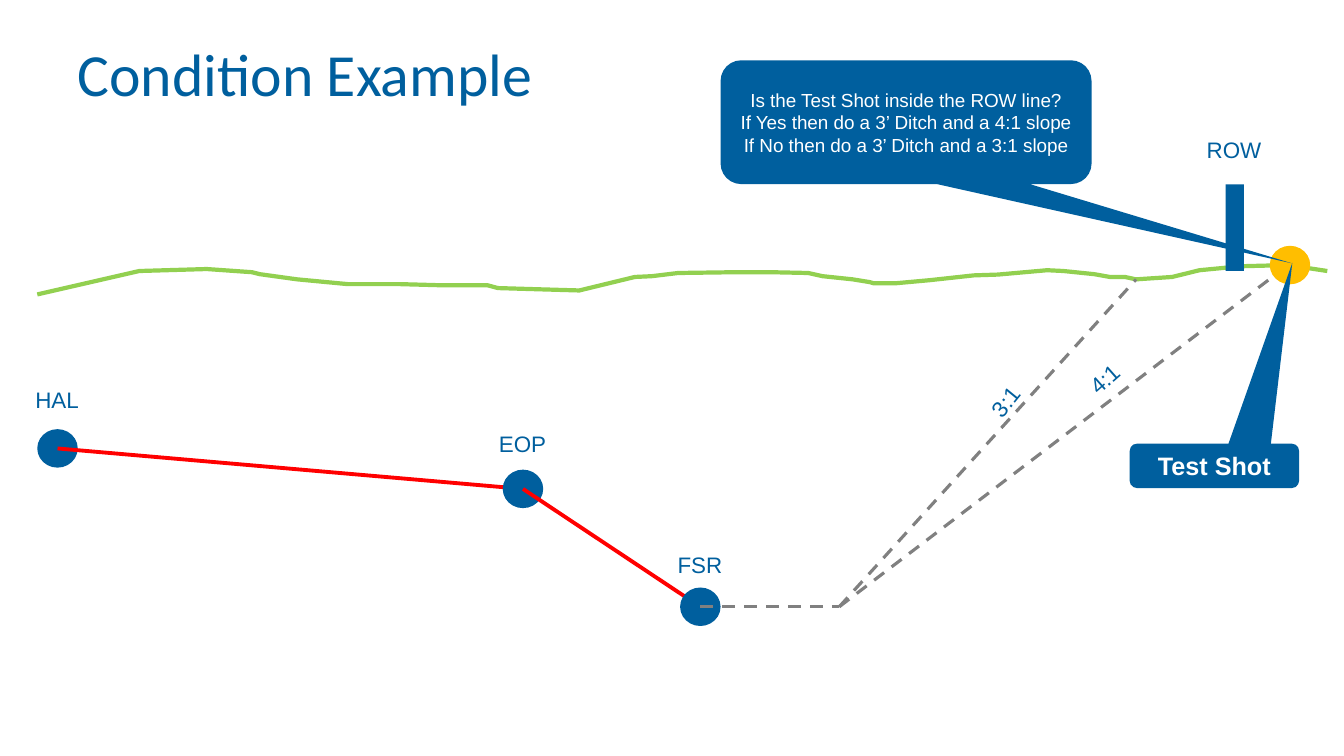
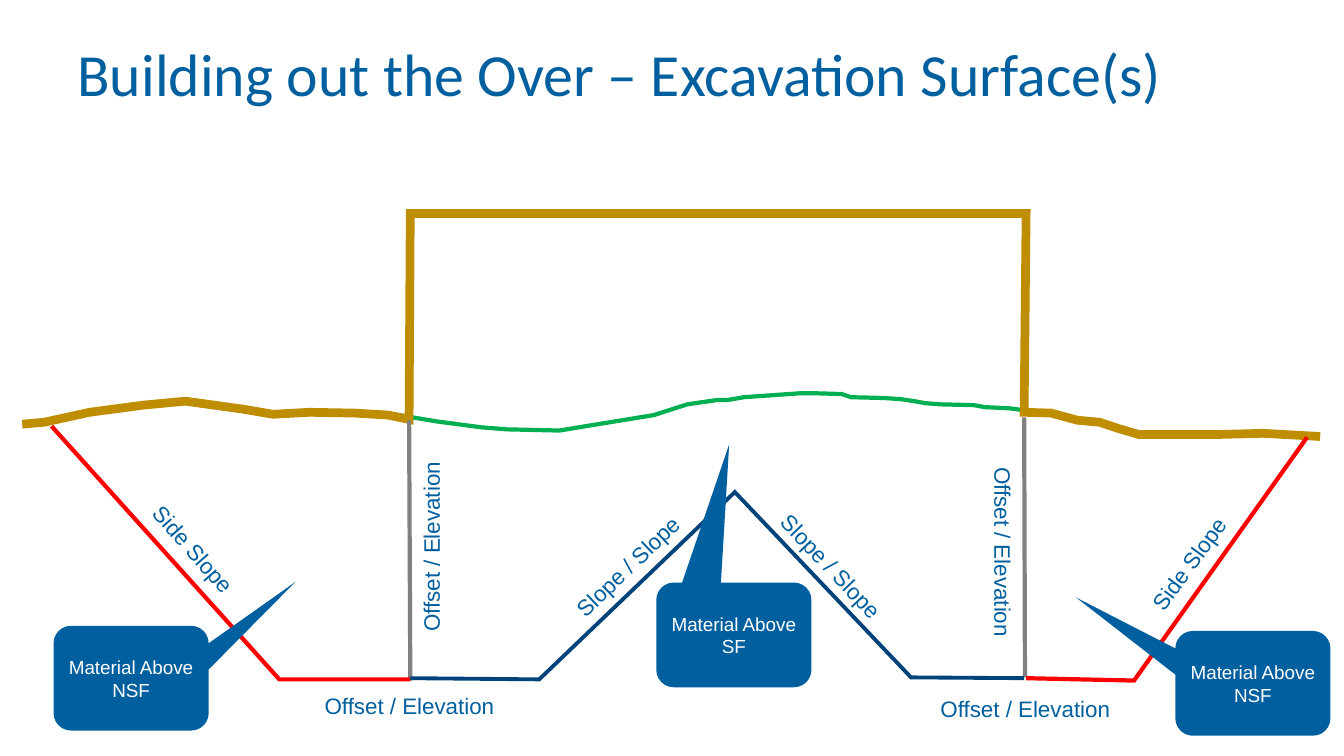
from lxml.etree import SubElement
from pptx import Presentation
from pptx.dml.color import RGBColor
from pptx.enum.dml import MSO_LINE
from pptx.enum.shapes import MSO_CONNECTOR, MSO_SHAPE
from pptx.enum.text import MSO_ANCHOR, MSO_AUTO_SIZE, PP_ALIGN
from pptx.oxml.ns import qn
from pptx.util import Cm, Pt

BLUE = RGBColor(0x00, 0x5F, 0x9E)
NAVY = RGBColor(0x00, 0x43, 0x7B)
WHITE = RGBColor(0xFF, 0xFF, 0xFF)
GRAY = RGBColor(0x80, 0x80, 0x80)
RED = RGBColor(0xFF, 0x00, 0x00)
YELLOW = RGBColor(0xFF, 0xBE, 0x00)
LIME = RGBColor(0x92, 0xD0, 0x50)
GREEN = RGBColor(0x00, 0xB0, 0x50)
OCHRE = RGBColor(0xBF, 0x8E, 0x00)

TITLE_ONLY = 5
TITLE_BOX = {"left": Cm(1.7), "top": Cm(0.94), "width": Cm(30.48), "height": Cm(2.03)}
TITLE_FRAME = {"auto_size": MSO_AUTO_SIZE.NONE, "vertical_anchor": MSO_ANCHOR.MIDDLE}
TITLE_PARAGRAPH = {"alignment": PP_ALIGN.LEFT, "line_spacing": 0.9}
TITLE_FONT = {"name": "Calibri", "size": Pt(42.7)}
NO_MARGINS = {side: 0 for side in ("margin_left", "margin_top", "margin_right", "margin_bottom")}
LABEL_FRAME = {**NO_MARGINS, "word_wrap": False, "auto_size": MSO_AUTO_SIZE.SHAPE_TO_FIT_TEXT}
LABEL_PARAGRAPH = {"alignment": PP_ALIGN.CENTER, "line_spacing": 1.2, "space_after": Pt(18)}
LABEL_FONT = {"name": "Arial", "size": Pt(16)}
CALLOUT_FRAME = {**NO_MARGINS, "word_wrap": True, "vertical_anchor": MSO_ANCHOR.MIDDLE}
CALLOUT_PARAGRAPH = {"alignment": PP_ALIGN.CENTER}
CALLOUT_FONT = {"name": "Arial", "size": Pt(13.5)}
TEST_SHOT_FONT = {"name": "Arial", "size": Pt(18), "bold": True}

LABEL_HEIGHT = 0.74
MARKER_WIDTH, MARKER_HEIGHT = 1.02, 0.97
MATERIAL_SIZE = (3.91, 2.64)

DITCH_GROUND = [
    (0.94, 7.42), (3.51, 6.83), (5.21, 6.78), (6.35, 6.86), (6.55, 6.91), (7.49, 7.04),
    (8.76, 7.16), (10.06, 7.16), (11.15, 7.19), (12.29, 7.19), (12.55, 7.26), (13.56, 7.29),
    (14.6, 7.32), (16, 6.98), (16.43, 6.96), (17.09, 6.88), (18.54, 6.86), (19.43, 6.86),
    (20.37, 6.88), (20.73, 6.96), (21.49, 7.04), (21.92, 7.11), (22.02, 7.14), (22.56, 7.14),
    (23.44, 7.06), (24.54, 6.94), (25.15, 6.92), (26.39, 6.81), (26.8, 6.83), (27.58, 6.91),
    (27.97, 6.98), (28.35, 6.98), (28.63, 7.04), (29.54, 6.98), (30.23, 6.81), (31.27, 6.71),
    (32.46, 6.68), (33.45, 6.83),
]
EXISTING_GROUND = [
    (0.97, 10.67), (1.55, 10.54), (1.98, 10.41), (2.57, 10.31), (3.3, 10.24), (4.7, 10.13),
    (5.66, 10.26), (6.71, 10.39), (9.09, 10.41), (9.93, 10.44), (11, 10.62), (12.14, 10.77),
    (12.78, 10.82), (14.1, 10.85), (14.58, 10.77), (16.48, 10.46), (17.32, 10.19),
    (18.08, 10.08), (18.34, 10.08), (18.75, 10.01), (20.17, 9.91), (20.52, 9.91),
    (21.21, 9.93), (21.45, 10.01), (22.28, 10.03), (22.71, 10.06), (23.04, 10.11),
    (23.32, 10.16), (23.7, 10.19), (24.54, 10.21), (24.82, 10.26), (25.43, 10.29),
    (26.37, 10.41), (26.8, 10.54), (27.03, 10.57), (27.91, 10.69), (28.37, 10.85),
    (28.6, 10.9), (29.29, 10.92), (30.81, 10.92), (31.29, 10.95), (31.98, 10.95),
    (32.89, 10.97),
]
FINISHED_SURFACE = [
    (0.56, 10.69), (1.12, 10.64), (2.26, 10.39), (3.61, 10.21), (4.67, 10.11), (6.12, 10.31),
    (6.88, 10.44), (7.8, 10.39), (8.94, 10.41), (9.78, 10.46), (10.31, 10.57), (10.34, 5.38),
    (25.86, 5.38), (25.81, 10.39), (26.49, 10.41), (27.15, 10.59), (27.71, 10.64),
    (28.19, 10.8), (28.7, 10.95), (29.49, 10.95), (30.71, 10.95), (31.83, 10.92), (33.27, 11),
]
LEFT_SIDE_SLOPE = [(10.34, 17.12), (7.04, 17.12), (1.3, 10.74)]
RIGHT_SIDE_SLOPE = [(25.86, 17.09), (28.58, 17.15), (32.94, 11.02)]
EXCAVATION_FLOOR = [(10.34, 17.09), (13.59, 17.12), (18.52, 12.4), (22.96, 17.07), (25.81, 17.09)]


def apply_format(target, values):
    for name, value in values.items():
        setattr(target, name, value)


def write_text(text_frame, lines, frame_format, paragraph_format, font_format, color):
    apply_format(text_frame, frame_format)
    text_frame.text = "\n".join(lines)
    for paragraph in text_frame.paragraphs:
        apply_format(paragraph, paragraph_format)
        apply_format(paragraph.font, font_format)
        paragraph.font.color.rgb = color


def add_titled_slide(presentation, title_text):
    slide = presentation.slides.add_slide(presentation.slide_layouts[TITLE_ONLY])
    title = slide.shapes.title
    apply_format(title, TITLE_BOX)
    write_text(title.text_frame, [title_text], TITLE_FRAME, TITLE_PARAGRAPH, TITLE_FONT, BLUE)
    return slide


def add_filled_shape(slide, kind, left, top, width, height, color):
    shape = slide.shapes.add_shape(kind, Cm(left), Cm(top), Cm(width), Cm(height))
    shape.shadow.inherit = False
    shape.fill.solid()
    shape.fill.fore_color.rgb = color
    shape.line.fill.background()
    return shape


def add_marker(slide, center, color):
    left, top = center[0] - MARKER_WIDTH / 2, center[1] - MARKER_HEIGHT / 2
    add_filled_shape(slide, MSO_SHAPE.OVAL, left, top, MARKER_WIDTH, MARKER_HEIGHT, color)


def add_callout(slide, position, size, pointer, lines, font_format=CALLOUT_FONT):
    shape = add_filled_shape(slide, MSO_SHAPE.ROUNDED_RECTANGULAR_CALLOUT, *position, *size, BLUE)
    for index, value in enumerate(pointer):
        shape.adjustments[index] = value
    write_text(shape.text_frame, lines, CALLOUT_FRAME, CALLOUT_PARAGRAPH, font_format, WHITE)


def add_label(slide, text, left, top, width, rotation=0):
    label = slide.shapes.add_textbox(Cm(left), Cm(top), Cm(width), Cm(LABEL_HEIGHT))
    label.rotation = rotation
    write_text(label.text_frame, [text], LABEL_FRAME, LABEL_PARAGRAPH, LABEL_FONT, BLUE)


def add_line(slide, start, end, color, weight, dash=None):
    ends = [Cm(value) for value in (*start, *end)]
    connector = slide.shapes.add_connector(MSO_CONNECTOR.STRAIGHT, *ends)
    connector.line.color.rgb = color
    connector.line.width = Pt(weight)
    connector.line.dash_style = dash
    SubElement(connector._element.spPr, qn("a:effectLst"))


def add_polyline(slide, points, color, weight):
    first, *rest = [(Cm(x), Cm(y)) for x, y in points]
    builder = slide.shapes.build_freeform(*first)
    builder.add_line_segments(rest, close=False)
    shape = builder.convert_to_shape()
    shape.shadow.inherit = False
    shape.fill.background()
    shape.line.color.rgb = color
    shape.line.width = Pt(weight)
    SubElement(shape.line._get_or_add_ln(), qn("a:miter"), lim="800000")


def build_condition_slide(presentation):
    slide = add_titled_slide(presentation, "Condition Example")
    add_polyline(slide, DITCH_GROUND, LIME, 3)

    stations = [(1.45, 11.3), (13.18, 12.32), (17.65, 15.29)]
    for start, end in zip(stations, stations[1:]):
        add_marker(slide, start, BLUE)
        add_line(slide, start, end, RED, 2.75)
    shoulder = stations[-1]
    add_marker(slide, shoulder, BLUE)

    ditch = (21.15, 15.29)
    add_line(slide, shoulder, ditch, GRAY, 2.25, MSO_LINE.DASH)
    add_filled_shape(slide, MSO_SHAPE.RECTANGLE, 30.89, 4.65, 0.46, 2.18, BLUE)
    for daylight in [(28.63, 7.04), (32.46, 6.68)]:
        add_line(slide, ditch, daylight, GRAY, 2.25, MSO_LINE.DASH)

    for label in [
        ("ROW", 30.3, 3.3, 1.6),
        ("3:1", 24.64, 9.68, 1.22, 309.2),
        ("4:1", 27.15, 9.09, 1.22, 318.5),
        ("HAL", 0.64, 9.6, 1.6),
        ("EOP", 12.37, 10.7, 1.6),
        ("FSR", 16.84, 13.75, 1.6),
    ]:
        add_label(slide, *label)

    add_marker(slide, (32.51, 6.68), YELLOW)
    add_callout(slide, (28.47, 11.18), (4.27, 1.12), (0.46, -4.57), ["Test Shot"], TEST_SHOT_FONT)
    add_callout(slide, (18.16, 1.52), (9.35, 3.12), (1.04, 1.14), [
        "Is the Test Shot inside the ROW line?",
        "If Yes then do a 3’ Ditch and a 4:1 slope",
        "If No then do a 3’ Ditch and a 3:1 slope",
    ])


def build_excavation_slide(presentation):
    slide = add_titled_slide(presentation, "Building out the Over – Excavation Surface(s)")
    add_polyline(slide, EXISTING_GROUND, GREEN, 3)
    add_polyline(slide, FINISHED_SURFACE, OCHRE, 6.25)
    add_line(slide, (10.31, 10.59), (10.34, 17.15), GRAY, 3)
    add_line(slide, (25.81, 10.52), (25.83, 17.07), GRAY, 3)
    add_polyline(slide, LEFT_SIDE_SLOPE, RED, 3)
    add_polyline(slide, RIGHT_SIDE_SLOPE, RED, 3)
    add_polyline(slide, EXCAVATION_FLOOR, NAVY, 2.75)

    for text, width, places in [
        ("Offset / Elevation", 4.34,
         [(8.59, 13.41, 270), (23.22, 13.54, 90), (23.67, 17.37, 0), (8.15, 17.3, 0)]),
        ("Side Slope", 2.74, [(28.5, 13.77, 306.3), (3.58, 13.39, 48.6)]),
        ("Slope / Slope", 3.38, [(19.33, 13.82, 46.4), (14.05, 13.82, 316.1)]),
    ]:
        for left, top, rotation in places:
            add_label(slide, text, left, top, width, rotation)

    for position, pointer, surface in [
        ((1.35, 15.77), (1.06, -0.92), "NSF"),
        ((29.62, 15.9), (-1.14, -0.82), "NSF"),
        ((16.54, 14.68), (-0.03, -1.82), "SF"),
    ]:
        add_callout(slide, position, MATERIAL_SIZE, pointer, ["Material Above", surface])


def main():
    presentation = Presentation()
    presentation.slide_width = Cm(33.87)
    presentation.slide_height = Cm(19.05)
    build_condition_slide(presentation)
    build_excavation_slide(presentation)
    presentation.save("out.pptx")


if __name__ == "__main__":
    main()
